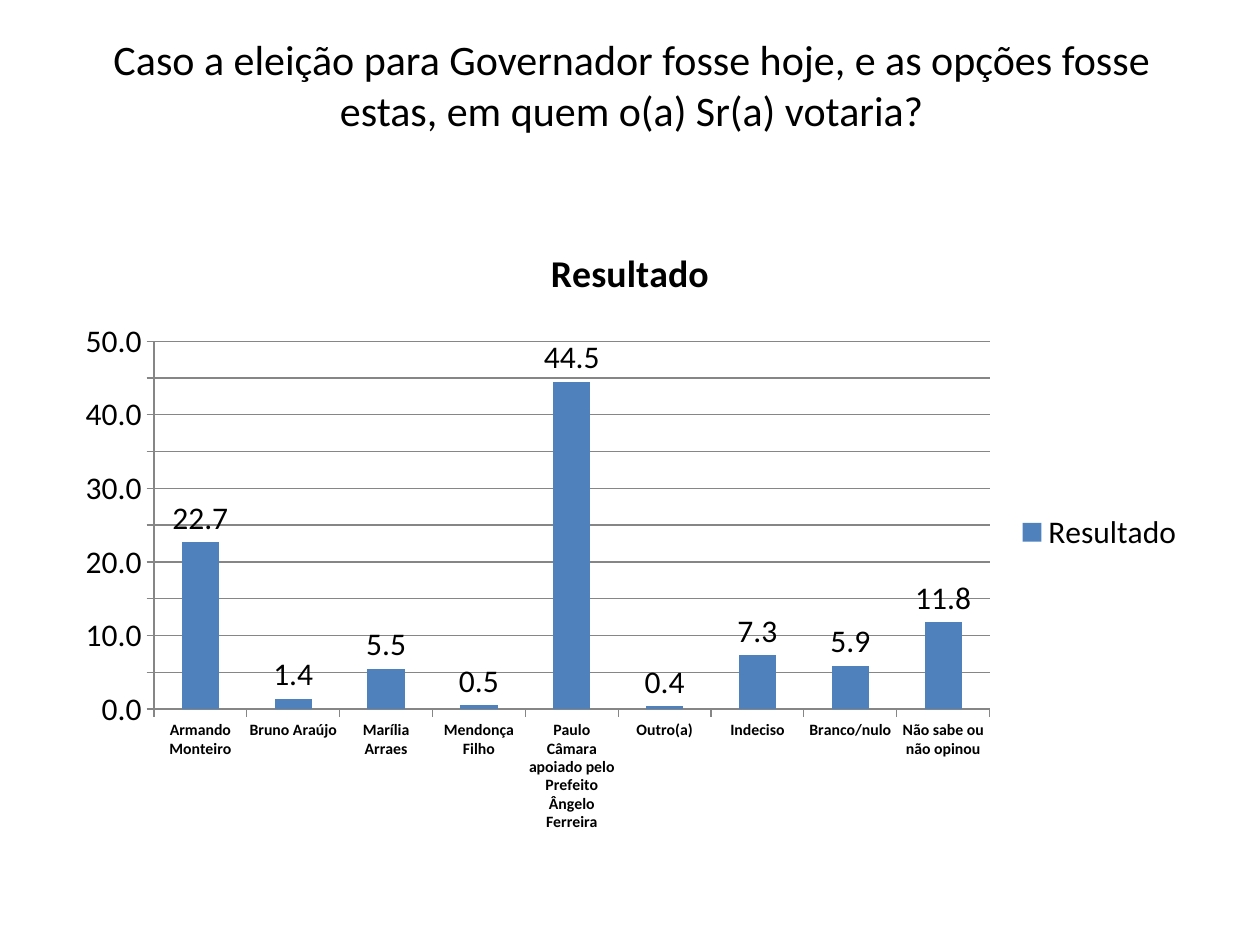
from typing import NamedTuple

from pptx import Presentation
from pptx.chart.data import CategoryChartData
from pptx.dml.color import RGBColor
from pptx.enum.chart import XL_CHART_TYPE as ChartType
from pptx.enum.chart import XL_LABEL_POSITION as LabelPosition
from pptx.enum.chart import XL_LEGEND_POSITION as LegendPosition
from pptx.enum.chart import XL_TICK_MARK as TickMark
from pptx.enum.text import MSO_ANCHOR as Anchor
from pptx.enum.text import PP_ALIGN as Align
from pptx.util import Pt

FONT = "Calibri"
BLACK, BLUE, GRAY = "000000", "4F81BD", "868686"
NUMBER_FORMAT = "0.0"
SERIES_NAME = "Resultado"
QUESTION = ("Caso a eleição para Governador fosse hoje, e as opções fosse "
            "estas, em quem o(a) Sr(a) votaria?")


class Answer(NamedTuple):
    name: str
    percent: float


ANSWERS = [
    Answer("Armando Monteiro", 22.7),
    Answer("Bruno Araújo", 1.4),
    Answer("Marília Arraes", 5.5),
    Answer("Mendonça Filho", 0.5),
    Answer("Paulo Câmara apoiado pelo Prefeito Ângelo Ferreira", 44.5),
    Answer("Outro(a)", 0.4),
    Answer("Indeciso", 7.3),
    Answer("Branco/nulo", 5.9),
    Answer("Não sabe ou não opinou", 11.8),
]


def color(value: str) -> RGBColor:
    return RGBColor.from_string(value)


def style_font(font, size: float, bold: bool = False) -> None:
    font.name = FONT
    font.size = Pt(size)
    font.bold = bold
    font.color.rgb = color(BLACK)


def style_line(line) -> None:
    line.color.rgb = color(GRAY)
    line.width = Pt(0.75)


def style_axis(axis, size: float, bold: bool = False) -> None:
    style_font(axis.tick_labels.font, size, bold)
    style_line(axis.format.line)
    axis.major_tick_mark = TickMark.OUTSIDE
    axis.minor_tick_mark = TickMark.NONE


def add_question(slide) -> None:
    box = slide.shapes.add_textbox(Pt(34), Pt(0), Pt(654), Pt(96))
    frame = box.text_frame
    frame.word_wrap = True
    frame.vertical_anchor = Anchor.MIDDLE
    frame.text = QUESTION
    paragraph = frame.paragraphs[0]
    paragraph.alignment = Align.CENTER
    style_font(paragraph.runs[0].font, 24)


def add_result_chart(slide) -> None:
    data = CategoryChartData(number_format=NUMBER_FORMAT)
    data.categories = [answer.name for answer in ANSWERS]
    data.add_series(SERIES_NAME, [answer.percent for answer in ANSWERS])
    chart = slide.shapes.add_chart(ChartType.COLUMN_CLUSTERED, Pt(36), Pt(126),
                                   Pt(648), Pt(356.4), data).chart
    style_font(chart.font, 18)

    # Chart title and legend
    chart.has_title = True
    title = chart.chart_title
    title.include_in_layout = False
    title.text_frame.text = SERIES_NAME
    style_font(title.text_frame.paragraphs[0].runs[0].font, 21.6, bold=True)
    chart.has_legend = True
    chart.legend.position = LegendPosition.RIGHT
    chart.legend.include_in_layout = False
    style_font(chart.legend.font, 18)

    # Axes
    style_axis(chart.category_axis, 9, bold=True)
    value_axis = chart.value_axis
    style_axis(value_axis, 18)
    value_axis.minimum_scale, value_axis.maximum_scale = 0, 50
    value_axis.major_unit = 5
    value_axis.has_major_gridlines = True
    style_line(value_axis.major_gridlines.format.line)
    value_axis.tick_labels.number_format = NUMBER_FORMAT
    value_axis.tick_labels.number_format_is_linked = False

    # Columns and their labels
    plot = chart.plots[0]
    plot.gap_width = 150
    plot.vary_by_categories = False
    series = plot.series[0]
    series.format.fill.solid()
    series.format.fill.fore_color.rgb = color(BLUE)
    labels = series.data_labels
    labels.show_value = True
    labels.position = LabelPosition.OUTSIDE_END
    labels.number_format = NUMBER_FORMAT
    labels.number_format_is_linked = False
    style_font(labels.font, 18)


def main() -> None:
    presentation = Presentation()
    presentation.slide_width, presentation.slide_height = Pt(720), Pt(540)
    slide = presentation.slides.add_slide(presentation.slide_layouts[6])
    add_question(slide)
    add_result_chart(slide)
    presentation.save("out.pptx")


if __name__ == "__main__":
    main()
